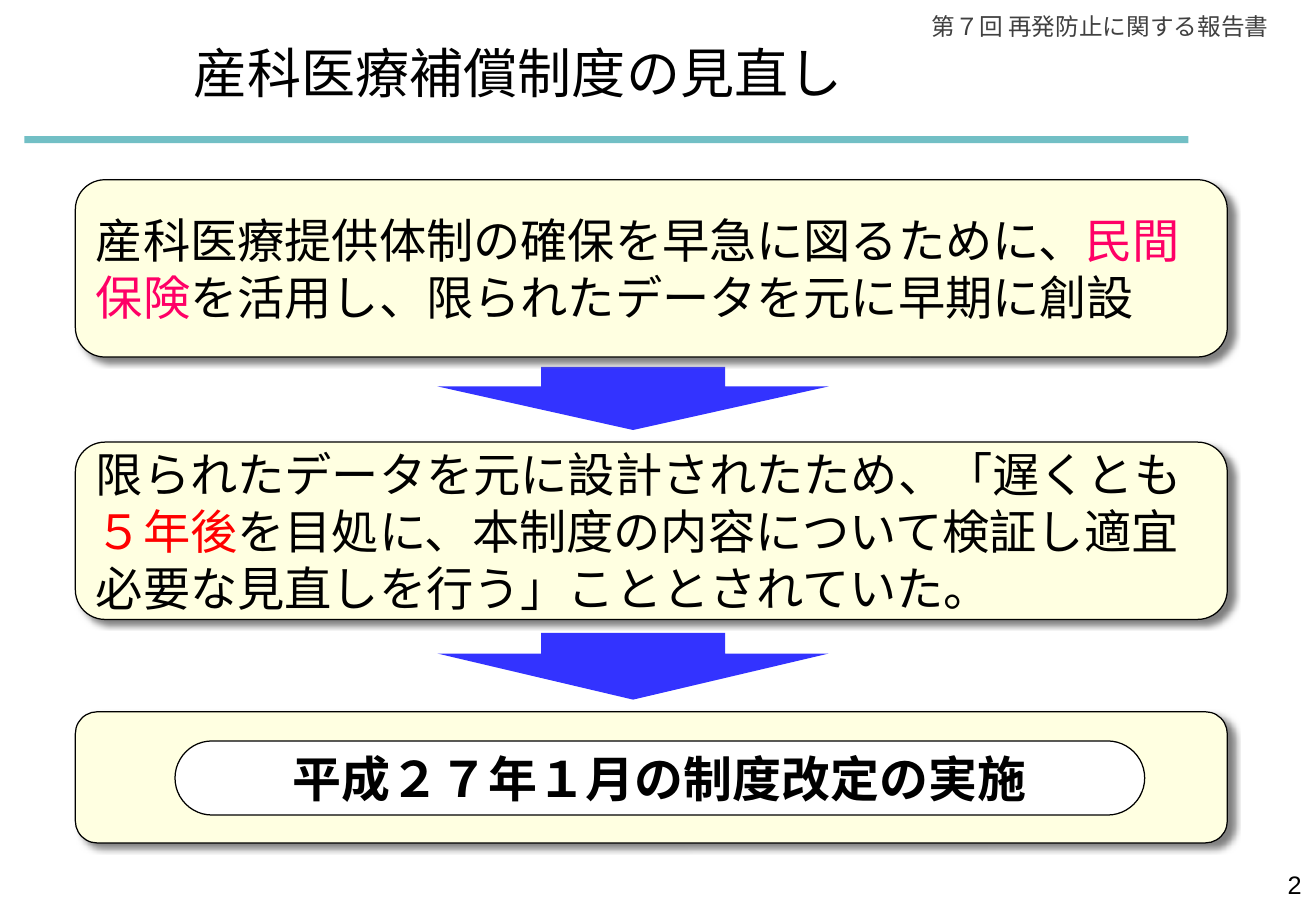
from lxml import etree
from pptx import Presentation
from pptx.dml.color import RGBColor
from pptx.enum.shapes import MSO_SHAPE as SHAPE
from pptx.enum.text import MSO_ANCHOR as ANCHOR, PP_ALIGN as ALIGN
from pptx.oxml import parse_xml
from pptx.oxml.ns import nsdecls, qn
from pptx.util import Inches, Pt

COLORS = {
    "black": "000000", "gray": "404040", "white": "FFFFFF", "teal": "72BFC5",
    "cream": "FFFFE1", "blue": "3333FF", "pink": "FF0066", "red": "FF0000",
    "shadow": "808080",
}


def add_box(kind, left, top, width, height, fill, outlined=False):
    sp = s.shapes.add_shape(kind, Inches(left), Inches(top), Inches(width), Inches(height))
    sp.shadow.inherit = False
    sp.fill.solid()
    sp.fill.fore_color.rgb = RGBColor.from_string(COLORS[fill])
    if outlined:
        sp.line.color.rgb = RGBColor.from_string(COLORS["black"])
        sp.line.width = Pt(0.75)
    else:
        sp.line.fill.background()
    return sp


def write(sp, runs, size, align=ALIGN.LEFT, anchor=ANCHOR.TOP, font="Arial", bold=False):
    tf = sp.text_frame
    tf.word_wrap = True
    tf.vertical_anchor = anchor
    p = tf.paragraphs[0]
    p.alignment = align
    p.font.name, p.font.size, p.font.bold = font, Pt(size), bold
    for text, color in runs:
        r = p.add_run()
        r.text = text
        r.font.color.rgb = RGBColor.from_string(COLORS[color])


prs = Presentation()
prs.slide_width, prs.slide_height = Inches(10.83), Inches(7.5)
s = prs.slides.add_slide(prs.slide_layouts[6])

# Rule under the title
add_box(SHAPE.RECTANGLE, 0.2, 1.12, 9.58, 0.06, "teal")

# Report name, title and page number
labels = [
    ((7.38, 0.05, 3.16, 0.34), "第７回 再発防止に関する報告書", "gray", 14, ALIGN.RIGHT, "Arial"),
    ((1.36, 0.28, 5.81, 0.93), "産科医療補償制度の見直し", "black", 32, ALIGN.CENTER,
     "Noto Sans CJK JP"),
    ((8.28, 7.11, 2.53, 0.52), "2", "black", 15, ALIGN.RIGHT, "Arial"),
]
for place, text, color, size, align, font in labels:
    tb = s.shapes.add_textbox(*(Inches(v) for v in place))
    write(tb, [(text, color)], size, align, font=font)

# Arrows between the steps
for top, height in [(3.02, 0.52), (5.21, 0.55)]:
    arrow = add_box(SHAPE.DOWN_ARROW, 3.6, top, 3.22, height, "blue")
    arrow.adjustments[0], arrow.adjustments[1] = 0.47, 0.69

# Step panels with a drop shadow
steps = [
    (1.48, 1.46, [("産科医療提供体制の確保を早急に図るために、", "black"),
                  ("民間保険", "pink"),
                  ("を活用し、限られたデータを元に早期に創設", "black")]),
    (3.64, 1.46, [("限られたデータを元に設計されたため、「遅くとも", "black"),
                  ("５年後", "red"),
                  ("を目処に、本制度の内容について検証し適宜必要な見直しを行う」"
                   "こととされていた。", "black")]),
    (5.86, 1.08, []),
]
for top, height, runs in steps:
    panel = add_box(SHAPE.ROUNDED_RECTANGLE, 0.62, top, 9.48, height, "cream", outlined=True)
    effects = panel.element.spPr.find(qn("a:effectLst"))
    shadow = etree.SubElement(effects, qn("a:outerShdw"), blurRad=str(Pt(4)),
                              dist=str(Pt(4)), dir=str(36 * 60000), algn="tl", rotWithShape="0")
    shadow.append(parse_xml(f'<a:srgbClr {nsdecls("a")} val="{COLORS["shadow"]}"/>'))
    if runs:
        write(panel, runs, 28, anchor=ANCHOR.MIDDLE)

# Outcome inside the last panel
pill = add_box(SHAPE.ROUNDED_RECTANGLE, 1.44, 6.1, 7.98, 0.61, "white", outlined=True)
pill.adjustments[0] = 0.5
write(pill, [("平成２７年１月の制度改定の実施", "black")], 29, ALIGN.CENTER, ANCHOR.MIDDLE, bold=True)

prs.save("out.pptx")
